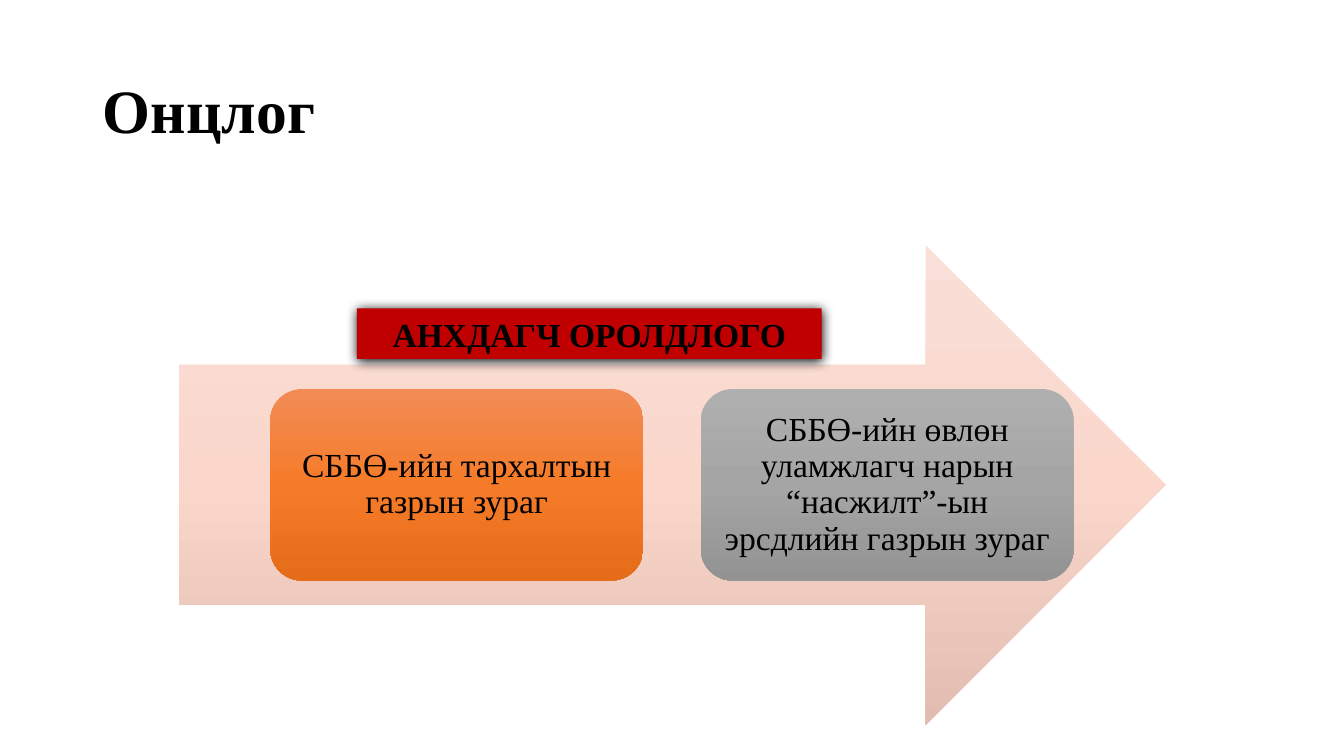
from copy import deepcopy

from lxml import etree
from pptx import Presentation
from pptx.dml.color import RGBColor
from pptx.enum import shapes, text
from pptx.oxml.ns import qn
from pptx.util import Inches, Pt


def write_text(shape, words, size=24, bold=False, align=text.PP_ALIGN.CENTER,
               line_spacing=1.0, margin=None):
    frame = shape.text_frame
    frame.word_wrap = True
    frame.vertical_anchor = text.MSO_ANCHOR.MIDDLE
    if margin is not None:
        frame.margin_left = frame.margin_right = margin
        frame.margin_top = frame.margin_bottom = margin
    paragraph = frame.paragraphs[0]
    paragraph.alignment = align
    paragraph.line_spacing = line_spacing
    run = paragraph.add_run()
    run.text = words
    run.font.name = "Times New Roman"
    run.font.size = Pt(size)
    run.font.bold = bold
    run.font.color.rgb = RGBColor.from_string("000000")


def add_block(slide, preset, left, top, width, height, colours):
    """Add a borderless shape: one colour fills it flat, three run from top to bottom."""
    shape = slide.shapes.add_shape(
        preset, Inches(left), Inches(top), Inches(width), Inches(height))
    shape.shadow.inherit = False
    shape.line.fill.background()
    if len(colours) == 1:
        shape.fill.solid()
        shape.fill.fore_color.rgb = RGBColor.from_string(colours[0])
        return shape
    shape.fill.gradient()
    shape.fill.gradient_angle = 270
    stop_list = shape.fill._xPr.find(".//" + qn("a:gsLst"))
    stop_list.append(deepcopy(stop_list[-1]))
    for stop, colour, position in zip(shape.fill.gradient_stops, colours, (0, 0.5, 1)):
        stop.color.rgb = RGBColor.from_string(colour)
        stop.position = position
    return shape


presentation = Presentation()
presentation.slide_width = Inches(13.33)
presentation.slide_height = Inches(7.5)
slide = presentation.slides.add_slide(presentation.slide_layouts[5])

title = slide.shapes.title
title.left, title.top = Inches(0.92), Inches(0.4)
title.width, title.height = Inches(11.5), Inches(1.45)
write_text(title, "Онцлог", size=44, bold=True,
           align=text.PP_ALIGN.LEFT, line_spacing=0.9)

add_block(slide, shapes.MSO_SHAPE.RIGHT_ARROW, 1.78, 2.43, 9.78, 4.76,
          ("FAE0D8", "FAD6CB", "E2BCB1"))

maps = [
    (2.68, "СББӨ-ийн тархалтын газрын зураг", ("F18C57", "F67B28", "E56C19")),
    (6.95, "СББӨ-ийн өвлөн уламжлагч нарын “насжилт”-ын эрсдлийн газрын зураг",
     ("AFAFAF", "A5A5A5", "939393")),
]
for left, words, colours in maps:
    card = add_block(slide, shapes.MSO_SHAPE.ROUNDED_RECTANGLE,
                     left, 3.86, 3.7, 1.9, colours)
    write_text(card, words, line_spacing=0.9, margin=Inches(0.1))

banner = add_block(slide, shapes.MSO_SHAPE.RECTANGLE, 3.54, 3.06, 4.61, 0.5, ("C00000",))
write_text(banner, "АНХДАГЧ ОРОЛДЛОГО", bold=True)
effects = banner._element.spPr.find(qn("a:effectLst"))
shadow = etree.SubElement(effects, qn("a:outerShdw"), blurRad=str(Pt(8.5)),
                          dist=str(Pt(1)), dir="5400000", algn="t", rotWithShape="0")
etree.SubElement(shadow, qn("a:srgbClr"), val="000000")

presentation.save("out.pptx")
